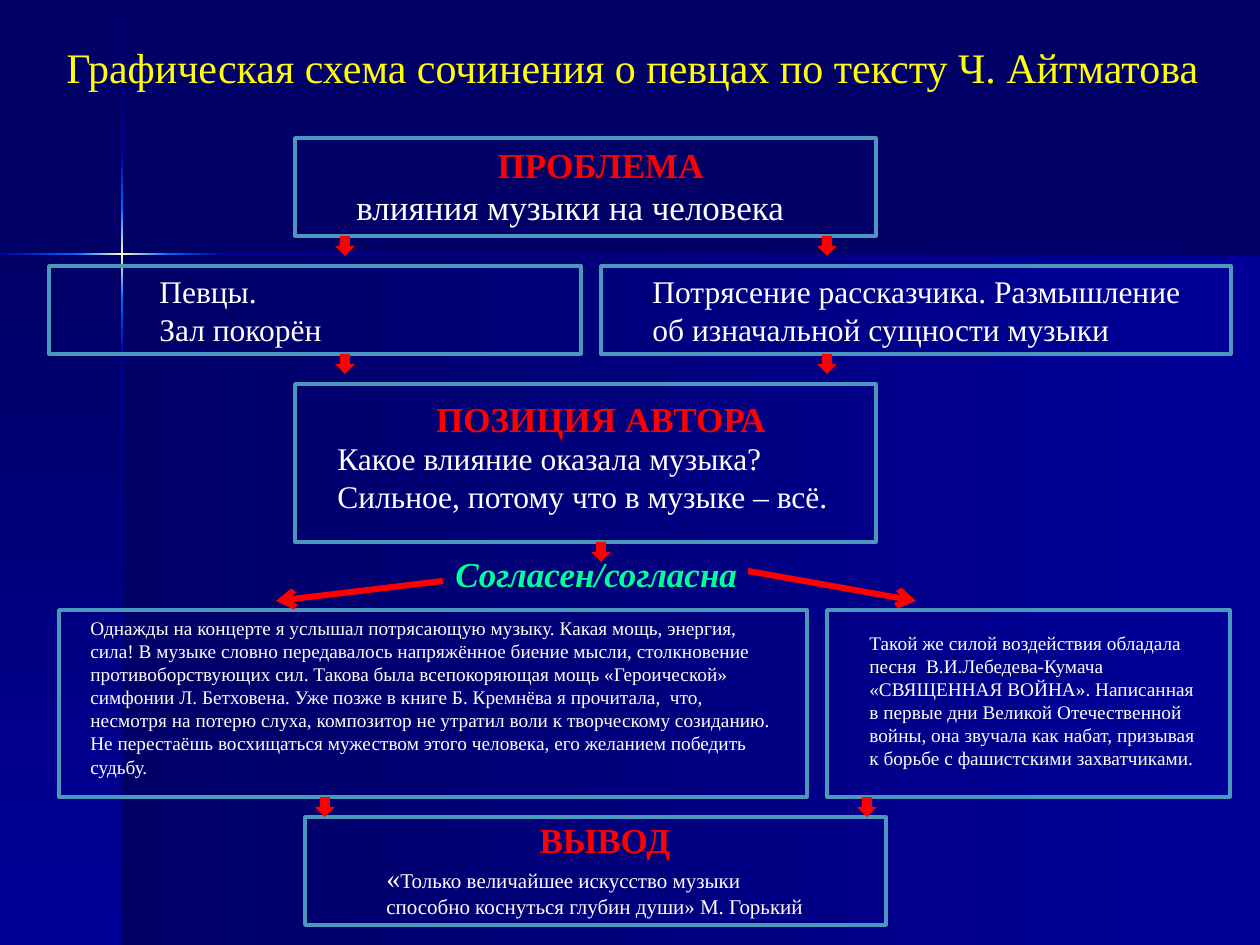
import pptx
import pptx.util
import pptx.dml.color
import pptx.enum.shapes
import pptx.enum.text
import pptx.oxml
import pptx.oxml.ns
import lxml.etree
from dataclasses import dataclass

SHAPE = pptx.enum.shapes.MSO_SHAPE
WIDE, HIGH = 1260, 945


@dataclass(frozen=True)
class Theme:
    font: str = "Times New Roman"
    night: str = "000066"
    blue: str = "000099"
    glow: str = "0066FF"
    spark: str = "FFFFCC"
    frame: str = "4B97BD"
    red: str = "FF0000"
    white: str = "FFFFFF"
    yellow: str = "FFFF00"
    green: str = "00FF99"
    title: int = 24
    head: int = 20
    body: int = 18
    quote: int = 16
    note: int = 12
    small: int = 11
    edge: float = 2
    arrow: float = 3.5


def emu(px):
    return pptx.util.Emu(round(px * pptx.util.Inches(10) / WIDE))


def rgb(code):
    return pptx.dml.color.RGBColor.from_string(code)


class Board:
    """Draws on one slide in one style."""

    def __init__(self, slide, theme):
        self.slide, self.theme = slide, theme
        slide.background.fill.solid()
        slide.background.fill.fore_color.rgb = rgb(theme.night)

    def shape(self, kind, box):
        item = self.slide.shapes.add_shape(kind, *map(emu, box))
        item.shadow.inherit = False
        item.line.fill.background()
        return item

    def band(self, box, colors, down=False):
        """Rectangle with evenly spaced gradient stops, running right or down."""
        item = self.shape(SHAPE.RECTANGLE, box)
        item.fill.gradient()
        item.fill.gradient_angle = 270 if down else 0
        stops = item._element.spPr.find(".//" + pptx.oxml.ns.qn("a:gsLst"))
        for old in list(stops):
            stops.remove(old)
        for i, code in enumerate(colors):
            stop = lxml.etree.SubElement(stops, pptx.oxml.ns.qn("a:gs"))
            stop.set("pos", str(100000 * i // (len(colors) - 1)))
            tint = lxml.etree.SubElement(stop, pptx.oxml.ns.qn("a:srgbClr"))
            tint.set("val", code)

    def frame(self, box):
        item = self.shape(SHAPE.RECTANGLE, box)
        item.fill.background()
        item.line.color.rgb = rgb(self.theme.frame)
        item.line.width = pptx.util.Pt(self.theme.edge)

    def drop(self, left, top):
        """Small block arrow pointing down."""
        item = self.shape(SHAPE.DOWN_ARROW, (left, top, 20, 20))
        item.fill.solid()
        item.fill.fore_color.rgb = rgb(self.theme.red)

    def arrow(self, start, end):
        kind = pptx.enum.shapes.MSO_CONNECTOR.STRAIGHT
        item = self.slide.shapes.add_connector(kind, *map(emu, start + end))
        item.line.color.rgb = rgb(self.theme.red)
        item.line.width = pptx.util.Pt(self.theme.arrow)
        tail = lxml.etree.SubElement(item.line._get_or_add_ln(), pptx.oxml.ns.qn("a:tailEnd"))
        tail.set("type", "arrow")
        lxml.etree.SubElement(item._element.spPr, pptx.oxml.ns.qn("a:effectLst"))

    def style(self, run, size, color, bold=False, slant=False):
        font = run.font
        font.name, font.size = self.theme.font, pptx.util.Pt(size)
        font.bold, font.italic = bold, slant
        font.color.rgb = rgb(color)

    def text(self, box, lines, size, color=None, head=None, **looks):
        """Text box of paragraphs, with an optional centred red heading."""
        frame = self.slide.shapes.add_textbox(*map(emu, box)).text_frame
        frame.word_wrap = True
        frame.auto_size = pptx.enum.text.MSO_AUTO_SIZE.SHAPE_TO_FIT_TEXT
        frame.text = "\n".join(([head] if head else []) + lines)
        for part in frame.paragraphs:
            for run in part.runs:
                self.style(run, size, color or self.theme.white, **looks)
        if head:
            first = frame.paragraphs[0]
            first.alignment = pptx.enum.text.PP_ALIGN.CENTER
            self.style(first.runs[0], self.theme.head, self.theme.red, bold=True)
        return frame


def backdrop(board):
    t = board.theme
    rise, fall = (t.night, t.blue), (t.blue, t.night)
    fade, grow = (t.glow, t.blue), (t.blue, t.glow)
    star = (t.glow, t.spark, t.glow)
    board.band((122, 255, 1138, 690), rise)
    board.band((0, 255, 122, 690), rise, down=True)
    for top, end, colors in ((1, 152, rise), (355, HIGH, fall), (300, 355, fade),
                             (152, 208, grow), (208, 300, star)):
        board.band((121, top, 2, end - top), colors, down=True)
    for left, end, colors in ((223, WIDE, fall), (0, 77, grow),
                              (168, 223, fade), (76, 168, star)):
        board.band((left, 253, end - left, 2), colors)


def words(board):
    t = board.theme
    board.text((54, 35, 1206, 64),
               ["Графическая схема сочинения о певцах по тексту Ч. Айтматова"],
               t.title, t.yellow)
    board.text((344, 137, 522, 97), ["влияния музыки на человека"],
               t.head, head="ПРОБЛЕМА ")
    board.text((147, 266, 305, 89), ["Певцы.", "Зал покорён"], t.body)
    board.text((640, 266, 561, 89),
               ["Потрясение рассказчика. Размышление об изначальной сущности музыки"],
               t.body)
    board.text((325, 391, 552, 131),
               ["Какое влияние оказала музыка?  Сильное, потому что в музыке – всё."],
               t.body, head="ПОЗИЦИЯ АВТОРА")
    board.text((78, 610, 708, 176), [
        "Однажды на концерте я услышал потрясающую музыку. Какая мощь, энергия, сила! "
        "В музыке словно передавалось напряжённое биение мысли, столкновение "
        "противоборствующих сил. Такова была всепокоряющая мощь «Героической» симфонии "
        "Л. Бетховена. Уже позже в книге Б. Кремнёва я прочитала,  что, несмотря на "
        "потерю слуха, композитор не утратил воли к творческому созиданию. Не перестаёшь "
        "восхищаться мужеством этого человека, его желанием победить судьбу."], t.small)
    board.text((857, 625, 354, 152), [
        "Такой же силой воздействия обладала песня  В.И.Лебедева-Кумача «СВЯЩЕННАЯ "
        "ВОЙНА». Написанная в первые дни Великой Отечественной войны, она звучала как "
        "набат, призывая к борьбе с фашистскими захватчиками."], t.small)
    end = board.text((374, 812, 462, 115),
                     ["«", "способно коснуться глубин души» М. Горький"],
                     t.note, head="ВЫВОД")
    quote = end.paragraphs[1]
    board.style(quote.runs[0], t.quote, t.white)
    rest = quote.add_run()
    rest.text = "Только величайшее искусство музыки"
    board.style(rest, t.note, t.white)
    board.text((443, 546, 364, 55), ["Согласен/согласна"],
               t.head, t.green, bold=True, slant=True)


def scheme(board):
    for box in ((49, 266, 532, 88), (601, 266, 630, 88), (295, 138, 581, 98),
                (295, 384, 581, 158), (827, 610, 403, 187), (59, 610, 748, 187),
                (305, 817, 581, 108)):
        board.frame(box)
    for top, lefts in ((236, (335, 817)), (354, (335, 817)),
                       (542, (591,)), (797, (315, 857))):
        for left in lefts:
            board.drop(left, top)
    board.arrow((748, 571), (916, 601))
    board.arrow((443, 581), (276, 601))


def main():
    deck = pptx.Presentation()
    deck.slide_width, deck.slide_height = emu(WIDE), emu(HIGH)
    board = Board(deck.slides.add_slide(deck.slide_layouts[6]), Theme())
    backdrop(board)
    words(board)
    scheme(board)
    deck.save("out.pptx")


if __name__ == "__main__":
    main()
